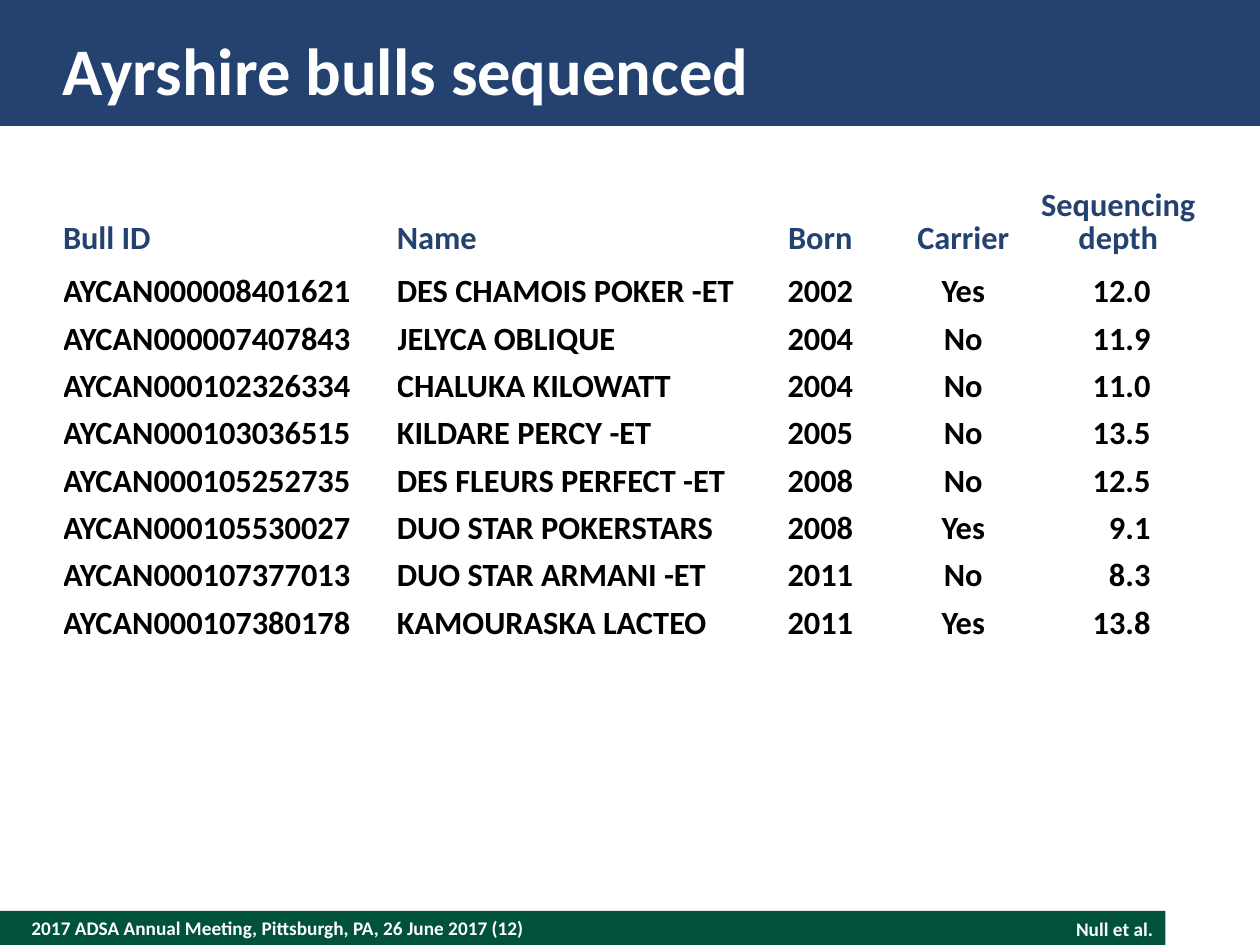
import pptx
import pptx.dml.color
import pptx.enum.shapes
import pptx.enum.text
import pptx.util

Pt = pptx.util.Pt
RGBColor = pptx.dml.color.RGBColor
ALIGN = pptx.enum.text.PP_ALIGN
ANCHOR = pptx.enum.text.MSO_ANCHOR

NAVY = RGBColor(0x24, 0x42, 0x70)
GREEN = RGBColor(0x00, 0x52, 0x3C)
WHITE = RGBColor(0xFF, 0xFF, 0xFF)
BLACK = RGBColor(0x00, 0x00, 0x00)


def set_format(target, values):
    for name, value in values.items():
        setattr(target, name, value)


def write_text(paragraph, text, size, color, alignment):
    paragraph.text = text
    paragraph.alignment = alignment
    set_format(paragraph.font, {"name": "Calibri", "size": Pt(size), "bold": True})
    paragraph.font.color.rgb = color


presentation = pptx.Presentation()
presentation.slide_width = Pt(720)
presentation.slide_height = Pt(540)
slide = presentation.slides.add_slide(presentation.slide_layouts[6])

# Footer and title bands
for left, top, width, height, color in [
    (0, 520.5, 666, 19.5, GREEN),
    (0, 0, 720, 72, NAVY),
]:
    shape = slide.shapes.add_shape(
        pptx.enum.shapes.MSO_SHAPE.RECTANGLE, Pt(left), Pt(top), Pt(width), Pt(height)
    )
    shape.shadow.inherit = False
    shape.fill.solid()
    shape.fill.fore_color.rgb = color
    shape.line.fill.background()

# Footer texts and title
NO_MARGINS = {"margin_left": 0, "margin_top": 0, "margin_right": 0, "margin_bottom": 0}
MIDDLE = {**NO_MARGINS, "vertical_anchor": ANCHOR.MIDDLE}
for text, left, top, width, height, size, alignment, frame_format in [
    ("2017 ADSA Annual Meeting, Pittsburgh, PA, 26 June 2017 (12)",
     18, 520.5, 504, 19.5, 11, ALIGN.LEFT, MIDDLE),
    ("Null et al.", 522, 520.5, 144, 20.6, 11, ALIGN.RIGHT, {}),
    ("Ayrshire bulls sequenced", 36, 14.4, 648, 50.4, 38, ALIGN.LEFT, MIDDLE),
]:
    text_box = slide.shapes.add_textbox(Pt(left), Pt(top), Pt(width), Pt(height))
    set_format(text_box.text_frame, {"word_wrap": True, **frame_format})
    write_text(text_box.text_frame.paragraphs[0], text, size, WHITE, alignment)

# Table of bulls
ROWS = [
    ("Bull ID", "Name", "Born", "Carrier", "Sequencing depth"),
    ("AYCAN000008401621", "DES CHAMOIS POKER -ET", "2002", "Yes", "12.0"),
    ("AYCAN000007407843", "JELYCA OBLIQUE", "2004", "No", "11.9"),
    ("AYCAN000102326334", "CHALUKA KILOWATT", "2004", "No", "11.0"),
    ("AYCAN000103036515", "KILDARE PERCY -ET", "2005", "No", "13.5"),
    ("AYCAN000105252735", "DES FLEURS PERFECT -ET", "2008", "No", "12.5"),
    ("AYCAN000105530027", "DUO STAR POKERSTARS", "2008", "Yes", "9.1"),
    ("AYCAN000107377013", "DUO STAR ARMANI -ET", "2011", "No", "8.3"),
    ("AYCAN000107380178", "KAMOURASKA LACTEO", "2011", "Yes", "13.8"),
]
COLUMN_WIDTHS = [190.8, 203.8, 76.3, 87.1, 90]
HEADER_ALIGNMENTS = [ALIGN.LEFT, ALIGN.LEFT, ALIGN.CENTER, ALIGN.CENTER, ALIGN.CENTER]
BODY_ALIGNMENTS = HEADER_ALIGNMENTS[:4] + [ALIGN.RIGHT]
HEADER_HEIGHT, BODY_HEIGHT = 41.6, 27

table = slide.shapes.add_table(
    len(ROWS), len(COLUMN_WIDTHS), Pt(36), Pt(109.4), Pt(648),
    Pt(HEADER_HEIGHT + BODY_HEIGHT * (len(ROWS) - 1)),
).table
table.horz_banding = False
for column, width in zip(table.columns, COLUMN_WIDTHS):
    column.width = Pt(width)

for row_index, row in enumerate(ROWS):
    is_header = row_index == 0
    table.rows[row_index].height = Pt(HEADER_HEIGHT if is_header else BODY_HEIGHT)
    alignments = HEADER_ALIGNMENTS if is_header else BODY_ALIGNMENTS
    for column_index, text in enumerate(row):
        cell = table.cell(row_index, column_index)
        cell.fill.background()
        set_format(cell, NO_MARGINS)
        if is_header:
            set_format(cell, {"vertical_anchor": ANCHOR.BOTTOM, "margin_bottom": Pt(3.6)})
        elif alignments[column_index] == ALIGN.RIGHT:
            cell.margin_right = Pt(26.6)
        paragraph = cell.text_frame.paragraphs[0]
        write_text(paragraph, text, 18.5, NAVY if is_header else BLACK,
                   alignments[column_index])
        paragraph.line_spacing = Pt(19 if is_header else 27)

presentation.save("out.pptx")
